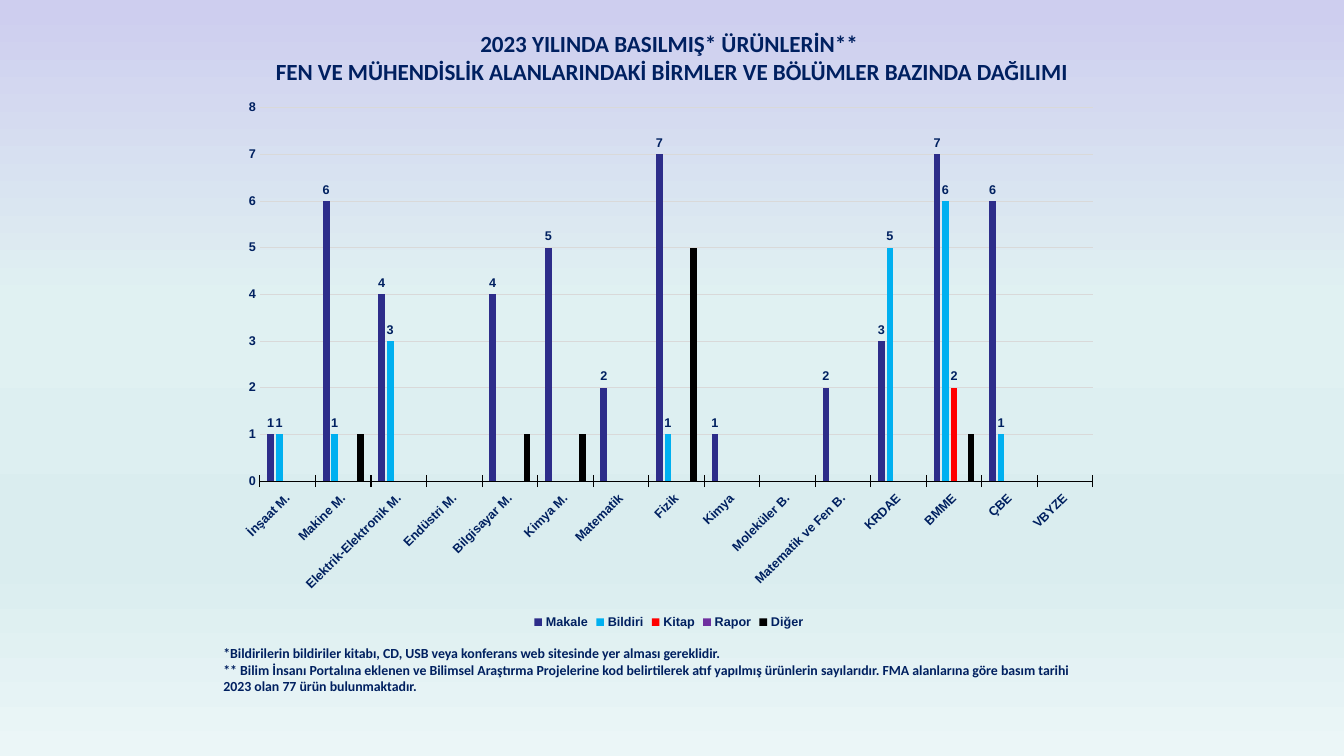
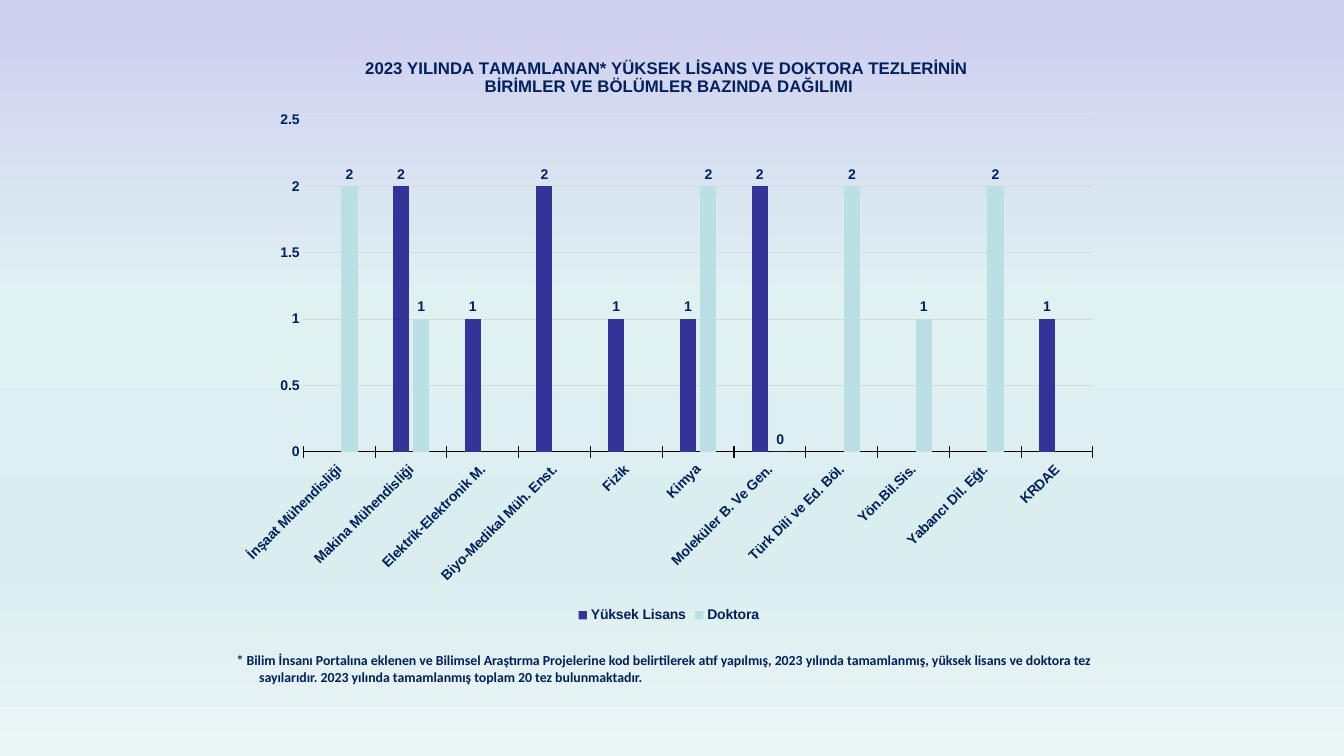
import pptx
import pptx.chart.data
import pptx.dml.color
import pptx.enum.chart
import pptx.enum.text
import pptx.oxml
import pptx.oxml.ns
import pptx.util

Pt = pptx.util.Pt
qn = pptx.oxml.ns.qn
XL = pptx.enum.chart

COLORS = {
    "ink": "002060", "grid": "D9D9D9", "axis": "000000",
    "article": "2D2D8A", "paper": "00B0F0", "book": "FF0000",
    "report": "7030A0", "other": "000000",
    "master": "333399", "doctorate": "BBE0E3",
}
BACKDROP = [(1, "CECEEF"), (40, "E0F1F2"), (74, "DAEDEF"), (100, "EBF6F7")]
CHART_LEFT, CHART_WIDTH = 162, 631.5


def rgb(name):
    return pptx.dml.color.RGBColor.from_string(COLORS[name])


def style_font(font, size, face="Arial"):
    font.size, font.name, font.bold = Pt(size), face, True
    font.color.rgb = rgb("ink")


def write(frame, lines, *, size, face="Calibri", centered=False, hanging=0):
    """Fill a text frame with one paragraph per line."""
    for index, line in enumerate(lines):
        paragraph = frame.paragraphs[0] if index == 0 else frame.add_paragraph()
        if centered:
            paragraph.alignment = pptx.enum.text.PP_ALIGN.CENTER
        if hanging:
            properties = paragraph._p.get_or_add_pPr()
            properties.set("marL", str(Pt(hanging)))
            properties.set("indent", str(-Pt(hanging)))
        run = paragraph.add_run()
        run.text = line
        style_font(run.font, size, face)


def place(element, top, height, box):
    """Put a chart part at box, in slide points, as fractions of its chart."""
    old = element.find(qn("c:layout"))
    if old is not None:
        element.remove(old)
    layout = pptx.oxml.parse_xml(
        f'<c:layout {pptx.oxml.ns.nsdecls("c")}><c:manualLayout/></c:layout>')
    settings = {"layoutTarget": "inner"} if len(box) == 4 else {}
    settings.update(xMode="edge", yMode="edge",
                    x=(box[0] - CHART_LEFT) / CHART_WIDTH, y=(box[1] - top) / height)
    if len(box) == 4:
        settings.update(w=box[2] / CHART_WIDTH, h=box[3] / height)
    for tag, value in settings.items():
        layout[0].append(layout[0].makeelement(qn(f"c:{tag}"), {"val": str(value)}))
    element.insert(1 if element.tag == qn("c:title") else 0, layout)


class Deck:
    def __init__(self):
        self.prs = pptx.Presentation()
        self.prs.slide_width, self.prs.slide_height = Pt(960), Pt(540)
        self.slide = None
        self.paint_backdrop()

    def paint_backdrop(self):
        fill = self.prs.slide_master.background.fill
        fill.gradient()
        fill.gradient_angle = 270
        stops = next(self.prs.slide_master.element.iter(qn("a:gsLst")))
        for stop in list(stops):
            stops.remove(stop)
        for percent, color in BACKDROP:
            stops.append(pptx.oxml.parse_xml(
                f'<a:gs {pptx.oxml.ns.nsdecls("a")} pos="{percent * 1000}">'
                f'<a:srgbClr val="{color}"/></a:gs>'))

    def new_slide(self):
        self.slide = self.prs.slides.add_slide(self.prs.slide_layouts[6])

    def text(self, lines, left, top, width, height, **style):
        frame = self.slide.shapes.add_textbox(
            Pt(left), Pt(top), Pt(width), Pt(height)).text_frame
        frame.word_wrap = True
        write(frame, lines, **style)

    def columns(self, categories, series, top, height, size, plot_box, maximum, step):
        """series holds (name, colour, values, labelled) rows."""
        data = pptx.chart.data.CategoryChartData()
        data.categories = categories
        for name, _, values, _ in series:
            data.add_series(name, values)
        chart = self.slide.shapes.add_chart(
            XL.XL_CHART_TYPE.COLUMN_CLUSTERED, Pt(CHART_LEFT), Pt(top),
            Pt(CHART_WIDTH), Pt(height), data).chart
        style_font(chart.font, 10)
        chart.has_title = False
        plot = chart.plots[0]
        plot.gap_width, plot.overlap, plot.vary_by_categories = 219, -27, False
        for bars, (_, color, _, labelled) in zip(plot.series, series):
            bars.format.fill.solid()
            bars.format.fill.fore_color.rgb = rgb(color)
            bars.invert_if_negative = False
            if labelled:
                labels = bars.data_labels
                labels.show_value = True
                labels.position = XL.XL_LABEL_POSITION.OUTSIDE_END
                style_font(labels.font, size)
        self.axes(chart, size, maximum, step)
        chart.has_legend = True
        chart.legend.position = XL.XL_LEGEND_POSITION.BOTTOM
        chart.legend.include_in_layout = False
        style_font(chart.legend.font, size)
        place(chart._chartSpace.chart.plotArea, top, height, plot_box)
        return chart

    def axes(self, chart, size, maximum, step):
        names, counts = chart.category_axis, chart.value_axis
        for axis in (names, counts):
            style_font(axis.tick_labels.font, size)
            axis.minor_tick_mark = XL.XL_TICK_MARK.NONE
        names.major_tick_mark = XL.XL_TICK_MARK.CROSS
        names.format.line.color.rgb = rgb("axis")
        names.format.line.width = Pt(0.75)
        names._element.find(qn("c:txPr")).find(qn("a:bodyPr")).set("rot", "-2700000")
        counts.major_tick_mark = XL.XL_TICK_MARK.NONE
        counts.minimum_scale, counts.maximum_scale = 0, maximum
        counts.major_unit = step
        counts.format.line.fill.background()
        counts.major_gridlines.format.line.color.rgb = rgb("grid")
        counts.major_gridlines.format.line.width = Pt(0.75)

    def chart_title(self, chart, lines, top, height, corner):
        chart.has_title = True
        title = chart.chart_title
        write(title.text_frame, lines, size=12, face="Arial", centered=True)
        title.include_in_layout = False
        place(title._element, top, height, corner)


def publications(deck):
    units = ["İnşaat M.", "Makine M.", "Elektrik-Elektronik M.", "Endüstri M.",
             "Bilgisayar M.", "Kimya M.", "Matematik", "Fizik", "Kimya",
             "Moleküler B.", "Matematik ve Fen B.", "KRDAE", "BMME", "ÇBE", "VBYZE"]
    gap = None
    products = [
        ("Makale", "article", [1, 6, 4, gap, 4, 5, 2, 7, 1, gap, 2, 3, 7, 6, gap], True),
        ("Bildiri", "paper", [1, 1, 3] + [gap] * 4 + [1] + [gap] * 3 + [5, 6, 1, gap], True),
        ("Kitap", "book", [gap] * 12 + [2, gap, gap], True),
        ("Rapor", "report", [gap] * 15, True),
        ("Diğer", "other", [gap, 1, gap, gap, 1, 1, gap, 5] + [gap] * 4 + [1, gap, gap], False),
    ]
    deck.new_slide()
    # Footnotes and heading
    deck.text(["*Bildirilerin bildiriler kitabı, CD, USB veya konferans web sitesinde "
               "yer alması gereklidir.",
               "** Bilim İnsanı Portalına eklenen ve Bilimsel Araştırma Projelerine kod "
               "belirtilerek atıf yapılmış ürünlerin sayılarıdır. FMA alanlarına göre "
               "basım tarihi 2023 olan 77 ürün bulunmaktadır."],
              152.5, 457, 630, 41, size=9.9)
    deck.text(["2023 YILINDA BASILMIŞ* ÜRÜNLERİN** ",
               "FEN VE MÜHENDİSLİK ALANLARINDAKİ BİRMLER VE BÖLÜMLER BAZINDA DAĞILIMI"],
              152.5, 17.5, 654.5, 68, size=16.5, centered=True)
    # Products per unit
    deck.columns(units, products, 64.5, 388, 9, (185.7, 77, 595, 266.7), 8, 1)


def theses(deck):
    units = ["İnşaat Mühendisliği", "Makina Mühendisliği", "Elektrik-Elektronik M.",
             "Biyo-Medikal Müh. Enst.", "Fizik", "Kimya", "Moleküler B. Ve Gen.",
             "Türk Dili ve Ed. Böl.", "Yön.Bil.Sis.", "Yabancı Dil. Eğt.", "KRDAE"]
    gap = None
    degrees = [
        ("Yüksek Lisans", "master", [gap, 2, 1, 2, 1, 1, 2, gap, gap, gap, 1], True),
        ("Doktora", "doctorate", [2, 1, gap, gap, gap, 2, 0, 2, 1, 2, gap], True),
    ]
    deck.new_slide()
    # Footnote
    deck.text(["* Bilim İnsanı Portalına eklenen ve Bilimsel Araştırma Projelerine kod "
               "belirtilerek atıf yapılmış, 2023 yılında tamamlanmış, yüksek lisans ve "
               "doktora tez sayılarıdır. 2023 yılında tamamlanmış toplam 20 tez "
               "bulunmaktadır."],
              CHART_LEFT, 462, CHART_WIDTH, 28, size=9.9, hanging=16)
    # Theses per unit
    top, height = 27, 421
    chart = deck.columns(units, degrees, top, height, 10, (216.7, 85.7, 564, 237), 2.5, 0.5)
    deck.chart_title(chart, ["2023 YILINDA TAMAMLANAN* YÜKSEK LİSANS VE DOKTORA TEZLERİNİN ",
                             " BİRİMLER VE BÖLÜMLER BAZINDA DAĞILIMI "],
                     top, height, (258.7, 39))


def main():
    deck = Deck()
    publications(deck)
    theses(deck)
    deck.prs.save("out.pptx")


if __name__ == "__main__":
    main()
